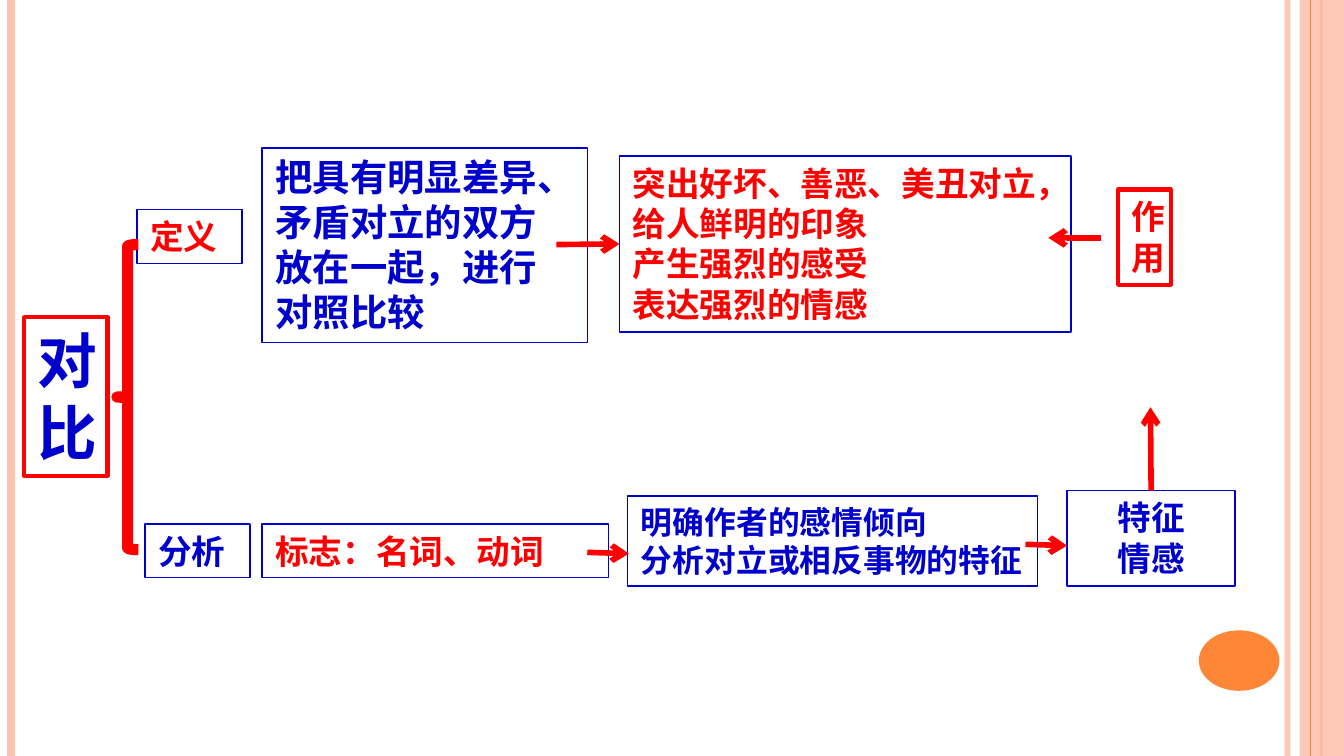
from lxml import etree
from pptx import Presentation, util as u
from pptx.dml.color import RGBColor
from pptx.enum import shapes as s, text as t
from pptx.oxml.ns import qn

COLUMNS, ROWS = 100, 56.25
CELL = u.Inches(0.1)
RED = RGBColor(0xFF, 0x00, 0x00)
BLUE = RGBColor(0x00, 0x00, 0xCC)
ORANGE = RGBColor(0xFE, 0x86, 0x37)
PEACH = RGBColor(0xFE, 0xC3, 0xAE)
SANS = "Noto Sans CJK SC"
LINE_HEIGHT = 1.2


def grid(*cells):
    return [round(cell * CELL) for cell in cells]


def set_opacity(properties, percent):
    color = properties.find(".//" + qn("a:srgbClr"))
    etree.SubElement(color, qn("a:alpha"), val=str(percent * 1000))


def add_figure(slide, kind, place, fill=None, line=None, width=0.75):
    shape = slide.shapes.add_shape(kind, *grid(*place))
    shape.shadow.inherit = False
    if fill is None:
        shape.fill.background()
    else:
        shape.fill.solid()
        shape.fill.fore_color.rgb = fill
    if line is None:
        shape.line.fill.background()
    else:
        shape.line.color.rgb = line
        shape.line.width = u.Pt(width)
    return shape


def write_text(shape, content, size=18, color=BLUE, font=SANS, align=t.PP_ALIGN.LEFT):
    frame = shape.text_frame
    frame.text = content
    frame.word_wrap = True
    frame.vertical_anchor = t.MSO_ANCHOR.TOP
    frame.auto_size = t.MSO_AUTO_SIZE.SHAPE_TO_FIT_TEXT
    for paragraph in frame.paragraphs:
        paragraph.alignment = align
        paragraph.line_spacing = u.Pt(size * LINE_HEIGHT)
        for run in paragraph.runs:
            run.font.size = u.Pt(size)
            run.font.bold = True
            run.font.color.rgb = color
            run.font.name = font
            east_asian = etree.SubElement(run.font._element, qn("a:ea"))
            east_asian.set("typeface", font)


def add_box(slide, place, content, line=BLUE, width=0.75, **text_format):
    box = add_figure(slide, s.MSO_SHAPE.RECTANGLE, place, line=line, width=width)
    write_text(box, content, **text_format)
    return box


def add_line(slide, start, end, color, width):
    connector = slide.shapes.add_connector(s.MSO_CONNECTOR.STRAIGHT, *grid(*start, *end))
    connector.line.color.rgb = color
    connector.line.width = u.Pt(width)
    etree.SubElement(connector._element.spPr, qn("a:effectLst"))
    return connector


def add_arrow(slide, start, end):
    arrow = add_line(slide, start, end, RED, 3)
    etree.SubElement(arrow.line._get_or_add_ln(), qn("a:tailEnd"), type="arrow")
    return arrow


def add_stripe(slide, column, color, width):
    return add_line(slide, (column, 0), (column, ROWS), color, width)


def add_decoration(slide):
    inner_stripe = add_stripe(slide, 95.8, PEACH, 3)
    set_opacity(inner_stripe._element.spPr, 93)
    add_stripe(slide, 0.8, PEACH, 4.5)
    add_stripe(slide, 98.3, ORANGE, 1.5)
    band = add_figure(slide, s.MSO_SHAPE.RECTANGLE, (96.7, 0, COLUMNS - 96.7, ROWS), fill=PEACH)
    set_opacity(band._element.spPr, 87)
    add_stripe(slide, 97.5, ORANGE, 0.75)
    add_figure(slide, s.MSO_SHAPE.OVAL, (89.2, 46.9, 6, 4.5), fill=ORANGE)


def add_diagram(slide):
    center = t.PP_ALIGN.CENTER
    add_box(slide, (1.8, 23.6, 6.2, 11.8), "对比", line=RED, width=2.25,
            size=32, font="Noto Sans CJK JP", align=center)
    add_box(slide, (10.2, 15.6, 7.8, 4), "定义", color=RED)
    add_box(slide, (10.8, 39, 7.8, 4), "分析")
    add_figure(slide, s.MSO_SHAPE.LEFT_BRACE, (8.7, 18.2, 1.6, 22.7), line=RED, width=6)
    add_box(slide, (19.5, 11, 24.2, 14.5),
            "把具有明显差异、矛盾对立的双方放在一起，进行对照比较", size=20, font="Arial")
    effects = add_box(slide, (46.1, 11.6, 33.6, 13.1),
                      "突出好坏、善恶、美丑对立，\n给人鲜明的印象\n产生强烈的感受\n表达强烈的情感",
                      color=RED)
    add_box(slide, (19.5, 39, 25.8, 4), "标志：名词、动词", color=RED)
    add_box(slide, (46.7, 36.9, 30.5, 6.7),
            "明确作者的感情倾向\n分析对立或相反事物的特征", size=17)
    features = add_box(slide, (79.4, 36.5, 12.5, 7.1), "特征\n情感", align=center)
    add_box(slide, (83.2, 14.1, 3.9, 7.1), "作用", line=RED, width=2.25,
            color=RED, align=center)

    add_arrow(slide, (43.7, 41.1), (46.8, 41.2))
    add_arrow(slide, (76.3, 40.5), (79.4, 40.6))
    add_arrow(slide, (81.9, 17.7), (78, 17.7))
    add_arrow(slide, (85.7, 36.5), (85.6, 30.3)).begin_connect(features, 0)
    add_arrow(slide, (41.4, 18.2), (46.1, 18.2)).end_connect(effects, 1)


def main():
    presentation = Presentation()
    presentation.slide_width, presentation.slide_height = grid(COLUMNS, ROWS)
    slide = presentation.slides.add_slide(presentation.slide_layouts[6])
    add_decoration(slide)
    add_diagram(slide)
    presentation.save("out.pptx")


if __name__ == "__main__":
    main()
